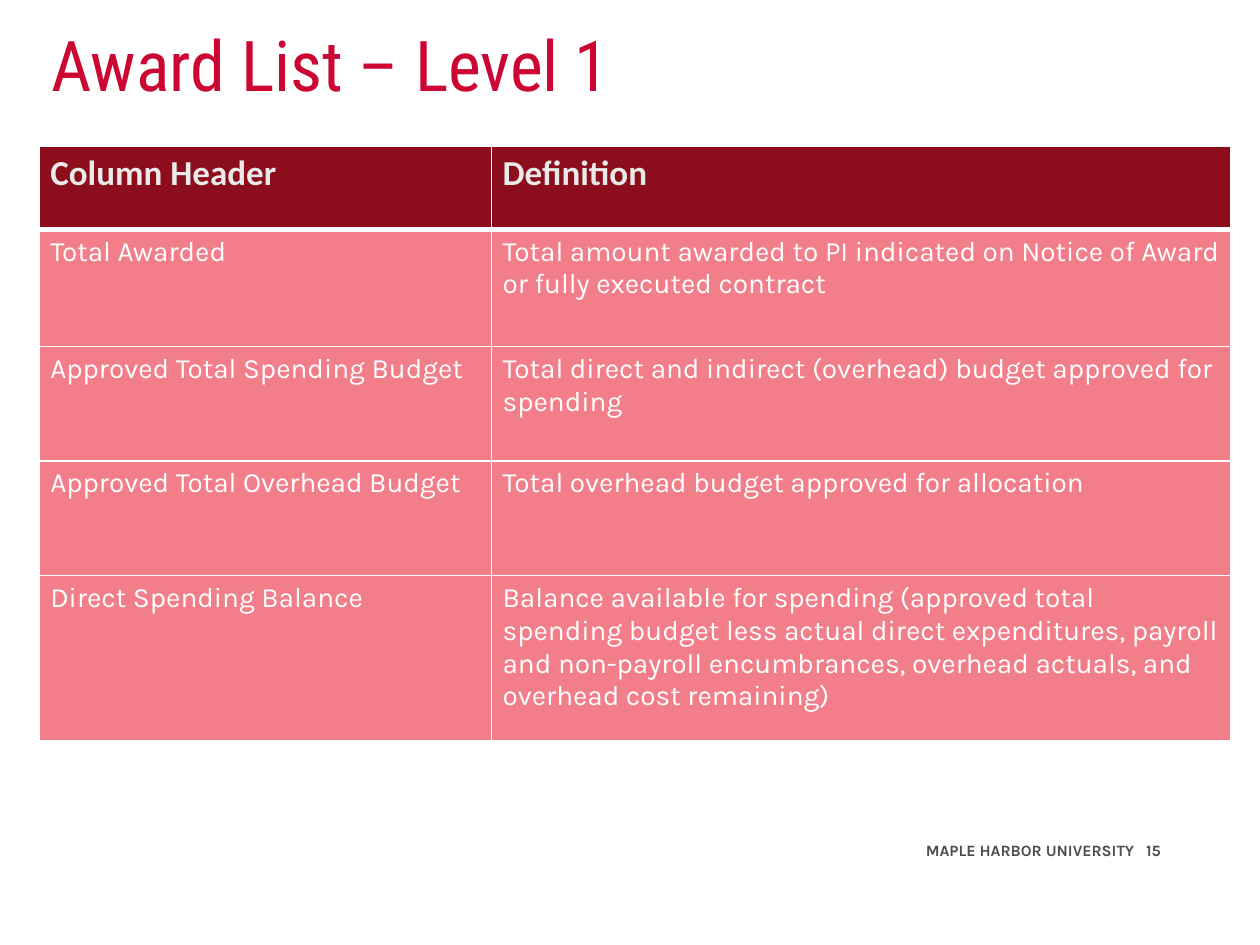
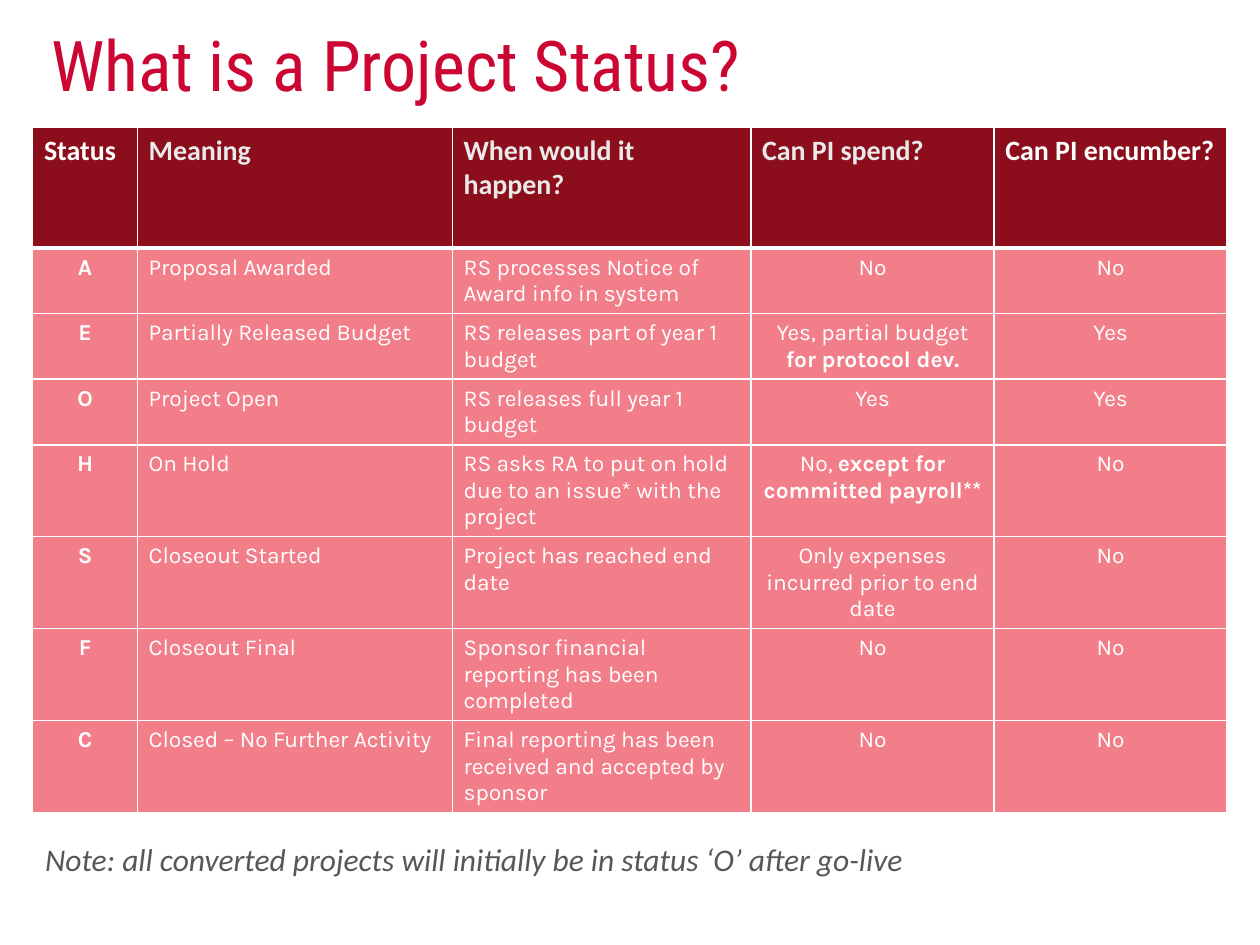
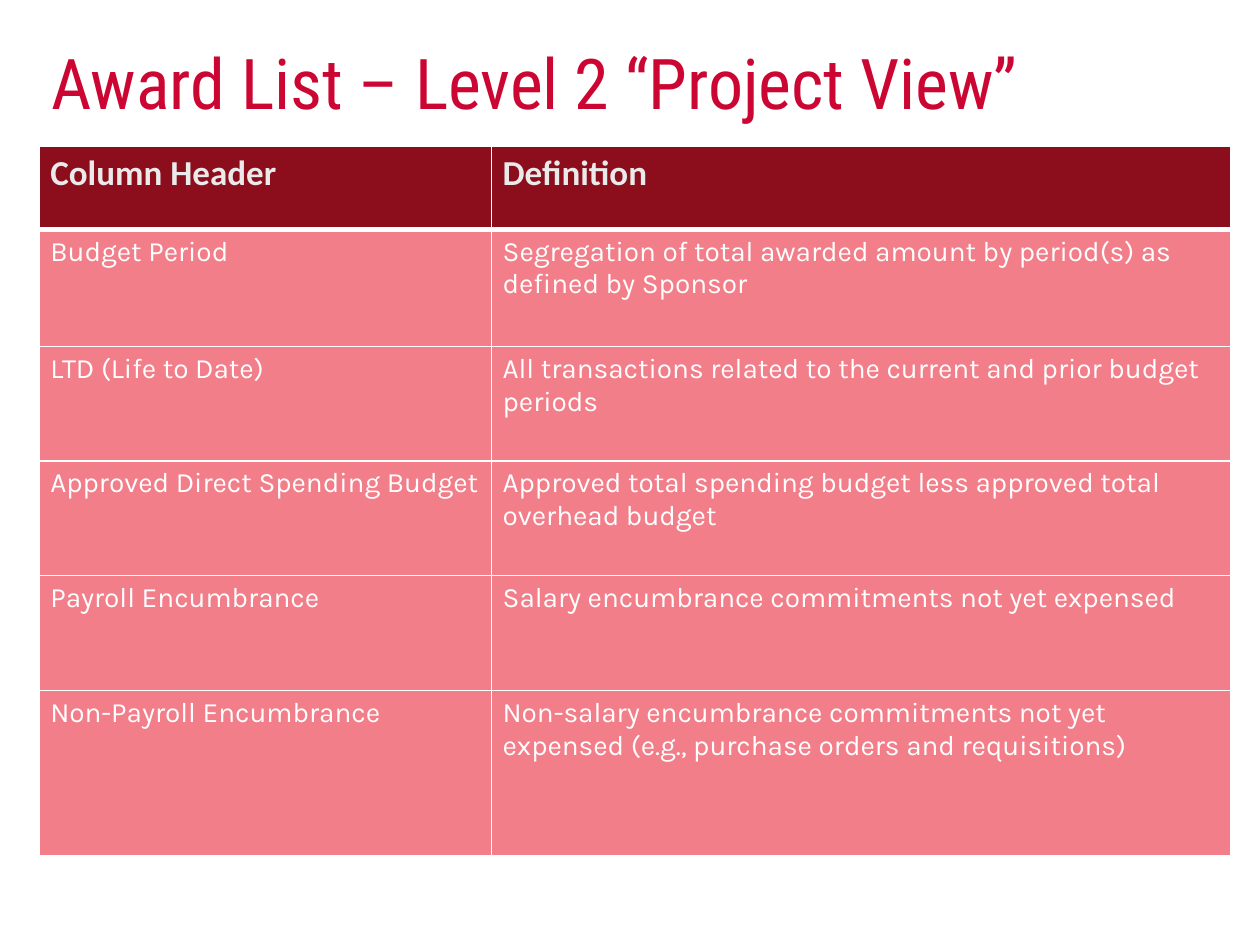
from lxml import etree
from pptx import Presentation
from pptx.dml.color import RGBColor
from pptx.enum.text import MSO_ANCHOR, MSO_AUTO_SIZE, PP_ALIGN
from pptx.oxml.ns import qn
from pptx.util import Inches, Pt

LEFT, MID, RIGHT = PP_ALIGN.LEFT, PP_ALIGN.CENTER, PP_ALIGN.RIGHT
CENTRE = MSO_ANCHOR.MIDDLE
FIXED = MSO_AUTO_SIZE.NONE

COLORS = {
    "title": "CC0633", "head": "8C0E1C", "body": "F27E8A", "white": "FFFFFF",
    "pale": "EAEAEA", "foot": "4D4D4C", "note": "54585A",
}
TITLE = dict(font="Roboto Condensed", size=40, color="title", spacing=0.9)
FOOT = dict(font="Karla", size=9, color="foot", bold=True, align=RIGHT)
NOTE = dict(font="Calibri", size=18, color="note", italic=True)
HEAD = dict(font="Calibri", color="pale", bold=True)
BODY = dict(font="Karla", color="white")


def put(frame, text, font, size, color, bold=False, italic=False, align=LEFT, spacing=None):
    """Write one paragraph; a part after "|" is bold."""
    para = frame.paragraphs[0]
    para.alignment = align
    if spacing:
        para.line_spacing = spacing
    for i, part in enumerate(text.split("|")):
        run = para.add_run()
        run.text = part
        run.font.name = font
        run.font.size = Pt(size)
        run.font.bold = bold or i > 0
        run.font.italic = italic
        run.font.color.rgb = RGBColor.from_string(COLORS[color])


def add_grid(slide, left, top, widths, heights, rows, sizes, mid=(), strong=(), bright=()):
    """Add a table; mid, strong and bright list centred, bold and white-headed columns."""
    shape = slide.shapes.add_table(len(rows), len(widths), Inches(left), Inches(top),
                                   Inches(sum(widths)), Inches(sum(heights)))
    table = shape.table
    table.first_row = table.horz_banding = False
    for col, width in zip(table.columns, widths):
        col.width = Inches(width)
    for r, (height, row) in enumerate(zip(heights, rows)):
        table.rows[r].height = Inches(height)
        for c, text in enumerate(row):
            cell = table.cell(r, c)
            cell.margin_left = cell.margin_right = Inches(0.09)
            cell.fill.solid()
            cell.fill.fore_color.rgb = RGBColor.from_string(COLORS["body" if r else "head"])
            if r:
                look = dict(BODY, size=sizes[1], bold=c in strong, align=MID if c in mid else LEFT)
            else:
                look = dict(HEAD, size=sizes[0], color="white" if c in bright else "pale")
            put(cell.text_frame, text, **look)
            for i, side in enumerate("LRTB"):
                thick = (r, side) in ((0, "B"), (1, "T"))
                line = etree.Element(qn(f"a:ln{side}"), w=str(Pt(3 if thick else 1)))
                fill = etree.SubElement(line, qn("a:solidFill"))
                etree.SubElement(fill, qn("a:srgbClr"), val=COLORS["white"])
                cell._tc.get_or_add_tcPr().insert(i, line)


deck = Presentation()
deck.slide_width, deck.slide_height = Inches(10), Inches(7.5)

# Slides and titles
slides = []
for text, top in (("Award List – Level 1", 0.22),
                  ("What is a Project Status?", 0.22),
                  ("Award List – Level 2 “Project View”", 0.36)):
    slide = deck.slides.add_slide(deck.slide_layouts[5])
    title = slide.shapes.title
    title.left, title.top = Inches(0.31), Inches(top)
    title.width, title.height = Inches(8.62), Inches(0.66)
    title.text_frame.auto_size = FIXED
    title.text_frame.vertical_anchor = CENTRE
    put(title.text_frame, text, **TITLE)
    slides.append(slide)
first, status, second = slides

# Definitions of the award list columns
level1 = [
    ("Total Awarded",
     "Total amount awarded to PI indicated on Notice of Award or fully executed contract"),
    ("Approved Total Spending Budget",
     "Total direct and indirect (overhead) budget approved for spending"),
    ("Approved Total Overhead Budget", "Total overhead budget approved for allocation"),
    ("Direct Spending Balance",
     "Balance available for spending (approved total spending budget less actual direct "
     "expenditures, payroll and non-payroll encumbrances, overhead actuals, and overhead "
     "cost remaining)"),
]
level2 = [
    ("Budget Period", "Segregation of total awarded amount by period(s) as defined by Sponsor"),
    ("LTD (Life to Date)", "All transactions related to the current and prior budget periods"),
    ("Approved Direct Spending Budget",
     "Approved total spending budget less approved total overhead budget"),
    ("Payroll Encumbrance", "Salary encumbrance commitments not yet expensed"),
    ("Non-Payroll Encumbrance",
     "Non-salary encumbrance commitments not yet expensed "
     "(e.g., purchase orders and requisitions)"),
]
for slide, terms in ((first, level1), (second, level2)):
    heights = [0.66, 0.93] + [0.91] * (len(terms) - 2) + [1.31]
    add_grid(slide, 0.31, 1.16, [3.59, 5.87], heights,
             [("Column Header", "Definition")] + terms, sizes=(20, 16))

# Footer
foot = first.shapes.add_textbox(Inches(6.6), Inches(6.55), Inches(2.71), Inches(0.4))
foot.text_frame.word_wrap = True
foot.text_frame.vertical_anchor = CENTRE
put(foot.text_frame, "MAPLE HARBOR UNIVERSITY   15", **FOOT)

# Project status
states = [
    ("Status", "Meaning", "When would it happen?", "Can PI spend?", "Can PI encumber?"),
    ("A", "Proposal Awarded", "RS processes Notice of Award info in system", "No", "No"),
    ("E", "Partially Released Budget", "RS releases part of year 1 budget",
     "Yes, partial budget |for protocol dev.", "Yes"),
    ("O", "Project Open", "RS releases full year 1 budget", "Yes", "Yes"),
    ("H", "On Hold", "RS asks RA to put on hold due to an issue* with the project",
     "No, |except for committed payroll**", "No"),
    ("S", "Closeout Started", "Project has reached end date",
     "Only expenses incurred prior to end date", "No"),
    ("F", "Closeout Final", "Sponsor financial reporting has been completed", "No", "No"),
    ("C", "Closed – No Further Activity",
     "Final reporting has been received and accepted by sponsor", "No", "No"),
]
add_grid(status, 0.26, 1.01, [0.83, 2.5, 2.37, 1.93, 1.85],
         [0.96] + [0.52] * 3 + [0.73] * 4, states, sizes=(16, 13),
         mid=(0, 3, 4), strong=(0,), bright=(0, 4))
note = status.shapes.add_textbox(Inches(0.26), Inches(6.62), Inches(7.1), Inches(0.4))
note.text_frame.word_wrap = False
put(note.text_frame,
    "Note: all converted projects will initially be in status ‘O’ after go-live", **NOTE)

deck.save("out.pptx")
